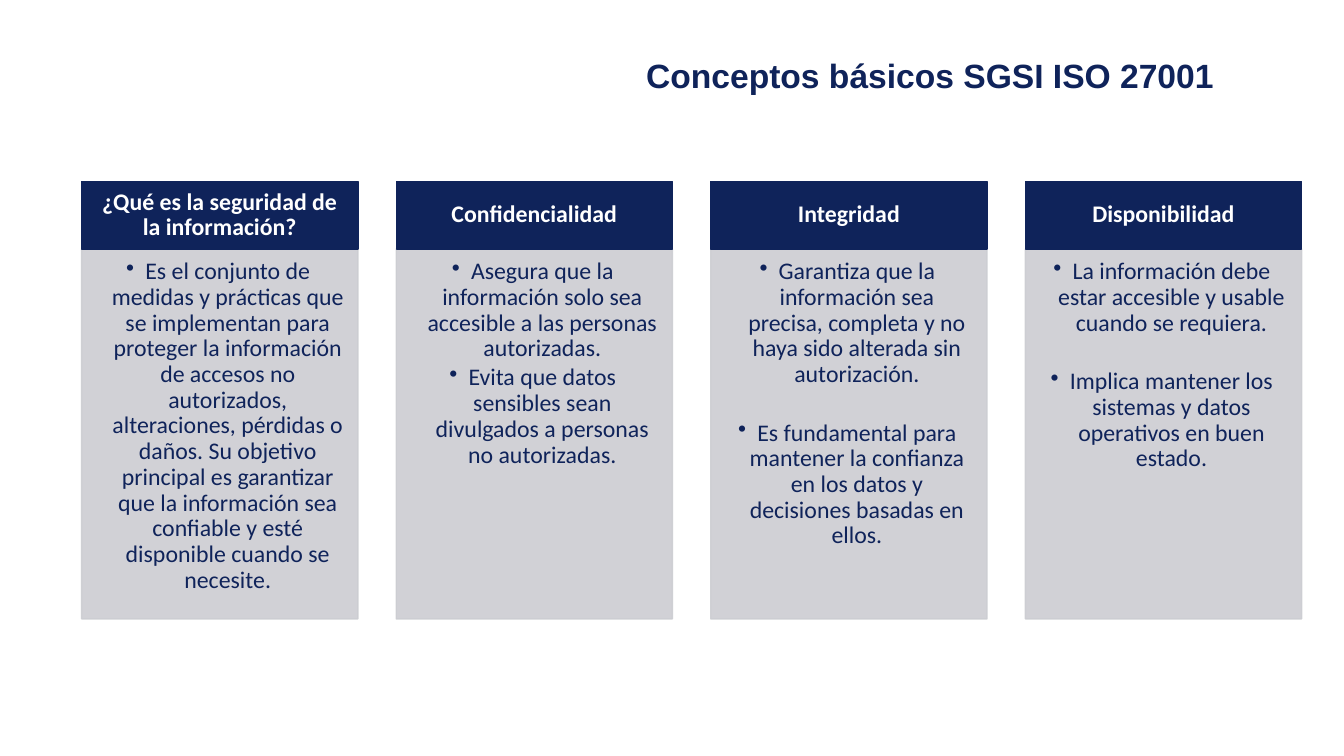
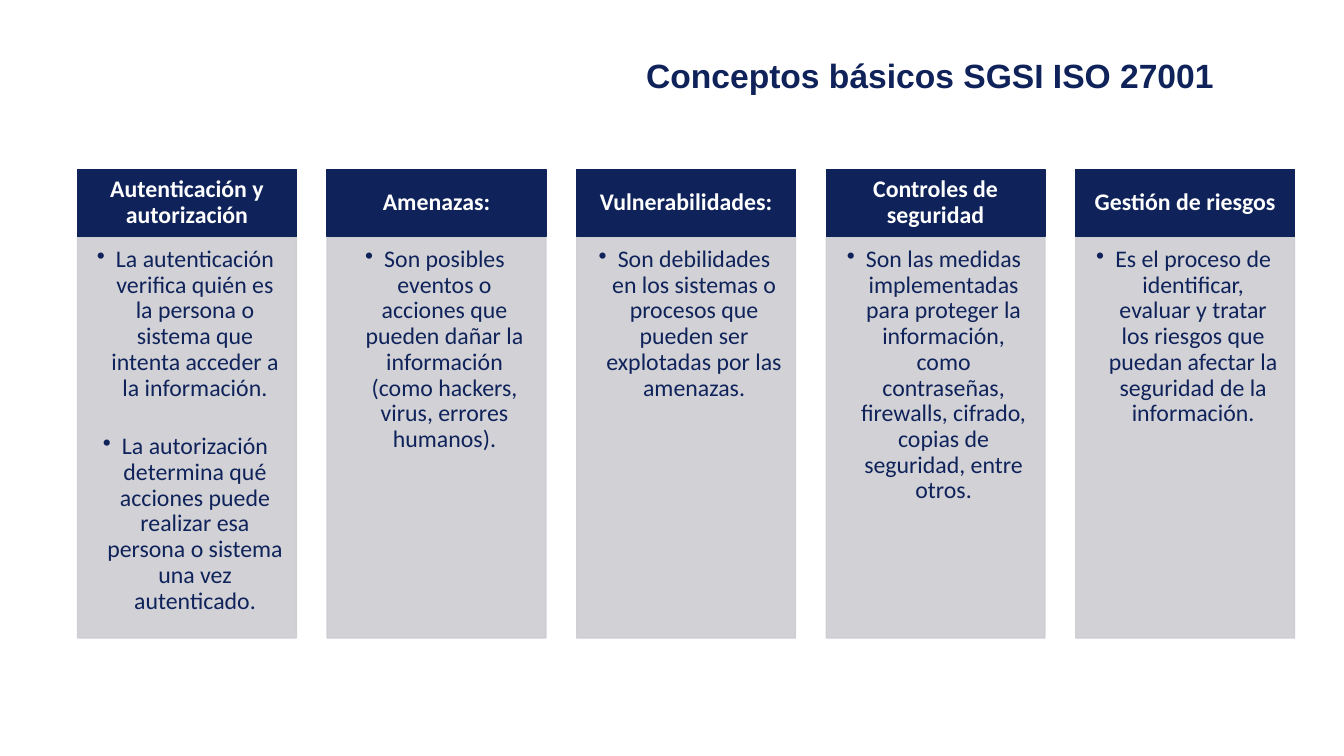
from dataclasses import dataclass

from lxml.etree import SubElement
from pptx import Presentation
from pptx.dml.color import RGBColor
from pptx.enum.shapes import MSO_SHAPE
from pptx.enum.text import MSO_ANCHOR, PP_ALIGN
from pptx.oxml.ns import qn
from pptx.util import Inches, Pt


@dataclass(frozen=True)
class Theme:
    navy: RGBColor = RGBColor(0x0F, 0x23, 0x5A)
    grey: RGBColor = RGBColor(0xCC, 0xCD, 0xD2)
    white: RGBColor = RGBColor(0xFF, 0xFF, 0xFF)
    title_font: str = "Arial"
    body_font: str = "Calibri"
    title_size: float = 24
    body_size: float = 17
    line_spacing: float = 0.9
    body_opacity: int = 90
    bullet_indent: float = 0.19


@dataclass(frozen=True)
class Concept:
    heading: str
    points: tuple
    gap: float = 2.5


@dataclass(frozen=True)
class Grid:
    left: float
    right: float
    top: float
    column_width: float
    body_height: float
    header_height: float = 0.67


class ConceptDeck:
    def __init__(self, theme):
        self.theme = theme
        self.deck = Presentation()
        self.deck.slide_width = Inches(13.33)
        self.deck.slide_height = Inches(7.5)
        self.page = None

    def add_page(self, title):
        self.page = self.deck.slides.add_slide(self.deck.slide_layouts[6])
        box = self.page.shapes.add_textbox(
            Inches(6.31), Inches(0.52), Inches(6.26), Inches(0.49))
        box.text_frame.word_wrap = True
        box.text_frame.vertical_anchor = MSO_ANCHOR.MIDDLE
        box.text_frame.text = title
        theme = self.theme
        self.format_para(box.text_frame.paragraphs[0], theme.title_font,
                         theme.title_size, theme.navy, bold=True)

    def format_para(self, para, font, size, color, bold=False):
        para.line_spacing = self.theme.line_spacing
        for span in para.runs:
            span.font.name = font
            span.font.size = Pt(size)
            span.font.bold = bold
            span.font.color.rgb = color

    def add_panel(self, left, top, width, height, color, margins, opacity=100):
        panel = self.page.shapes.add_shape(
            MSO_SHAPE.RECTANGLE, Inches(left), Inches(top),
            Inches(width), Inches(height))
        panel.shadow.inherit = False
        panel.fill.solid()
        panel.fill.fore_color.rgb = color
        panel.line.color.rgb = color
        panel.line.width = Pt(1)
        if opacity < 100:
            for color_node in panel.element.spPr.iter(qn("a:srgbClr")):
                SubElement(color_node, qn("a:alpha"), val=str(opacity * 1000))
        frame = panel.text_frame
        frame.word_wrap = True
        (frame.margin_left, frame.margin_top,
         frame.margin_right, frame.margin_bottom) = map(Inches, margins)
        return frame

    def add_header(self, text, left, top, width, height):
        theme = self.theme
        frame = self.add_panel(left, top, width, height, theme.navy,
                               (0.13, 0.08, 0.13, 0.08))
        frame.vertical_anchor = MSO_ANCHOR.MIDDLE
        frame.text = text
        para = frame.paragraphs[0]
        para.alignment = PP_ALIGN.CENTER
        self.format_para(para, theme.body_font, theme.body_size,
                         theme.white, bold=True)

    def add_bullets(self, points, gap, left, top, width, height):
        theme = self.theme
        frame = self.add_panel(left, top, width, height, theme.grey,
                               (0.1, 0.1, 0.13, 0.15), theme.body_opacity)
        frame.vertical_anchor = MSO_ANCHOR.TOP
        frame.text = "\n".join(points)
        for para in frame.paragraphs:
            properties = para._p.get_or_add_pPr()
            indent = Inches(theme.bullet_indent)
            properties.set("marL", str(indent))
            properties.set("indent", str(-indent))
            SubElement(properties, qn("a:buChar"), char="•")
            para.alignment = PP_ALIGN.CENTER
            para.space_after = Pt(gap)
            self.format_para(para, theme.body_font, theme.body_size, theme.navy)

    def add_columns(self, grid, concepts):
        span = grid.right - grid.left - grid.column_width
        pitch = span / (len(concepts) - 1)
        for index, concept in enumerate(concepts):
            left = grid.left + index * pitch
            self.add_bullets(concept.points, concept.gap, left,
                             grid.top + grid.header_height,
                             grid.column_width, grid.body_height)
            self.add_header(concept.heading, left, grid.top,
                            grid.column_width, grid.header_height)

    def save(self):
        self.deck.save("out.pptx")


TITLE = "Conceptos básicos SGSI ISO 27001"
WIDE_GAP = 23.5

PRINCIPLES = (
    Concept("¿Qué es la seguridad de la información?", (
        "Es el conjunto de medidas y prácticas que se implementan para "
        "proteger la información de accesos no autorizados, alteraciones, "
        "pérdidas o daños. Su objetivo principal es garantizar que la "
        "información sea confiable y esté disponible cuando se necesite.",)),
    Concept("Confidencialidad", (
        "Asegura que la información solo sea accesible a las personas "
        "autorizadas.",
        "Evita que datos sensibles sean divulgados a personas no "
        "autorizadas.")),
    Concept("Integridad", (
        "Garantiza que la información sea precisa, completa y no haya sido "
        "alterada sin autorización.",
        "Es fundamental para mantener la confianza en los datos y decisiones "
        "basadas en ellos."), WIDE_GAP),
    Concept("Disponibilidad", (
        "La información debe estar accesible y usable cuando se requiera.",
        "Implica mantener los sistemas y datos operativos en buen estado."),
        WIDE_GAP),
)

PRACTICES = (
    Concept("Autenticación y autorización", (
        "La autenticación verifica quién es la persona o sistema que intenta "
        "acceder a la información.",
        "La autorización determina qué acciones puede realizar esa persona o "
        "sistema una vez autenticado."), WIDE_GAP),
    Concept("Amenazas:", (
        "Son posibles eventos o acciones que pueden dañar la información "
        "(como hackers, virus, errores humanos).",)),
    Concept("Vulnerabilidades:", (
        "Son debilidades en los sistemas o procesos que pueden ser explotadas "
        "por las amenazas.",)),
    Concept("Controles de seguridad", (
        "Son las medidas implementadas para proteger la información, como "
        "contraseñas, firewalls, cifrado, copias de seguridad, entre otros.",)),
    Concept("Gestión de riesgos", (
        "Es el proceso de identificar, evaluar y tratar los riesgos que "
        "puedan afectar la seguridad de la información.",)),
)

PAGES = (
    (Grid(left=0.81, right=12.91, top=1.8, column_width=2.74,
          body_height=3.67), PRINCIPLES),
    (Grid(left=0.77, right=12.84, top=1.68, column_width=2.17,
          body_height=3.98), PRACTICES),
)


def main():
    deck = ConceptDeck(Theme())
    for grid, concepts in PAGES:
        deck.add_page(TITLE)
        deck.add_columns(grid, concepts)
    deck.save()


if __name__ == "__main__":
    main()
